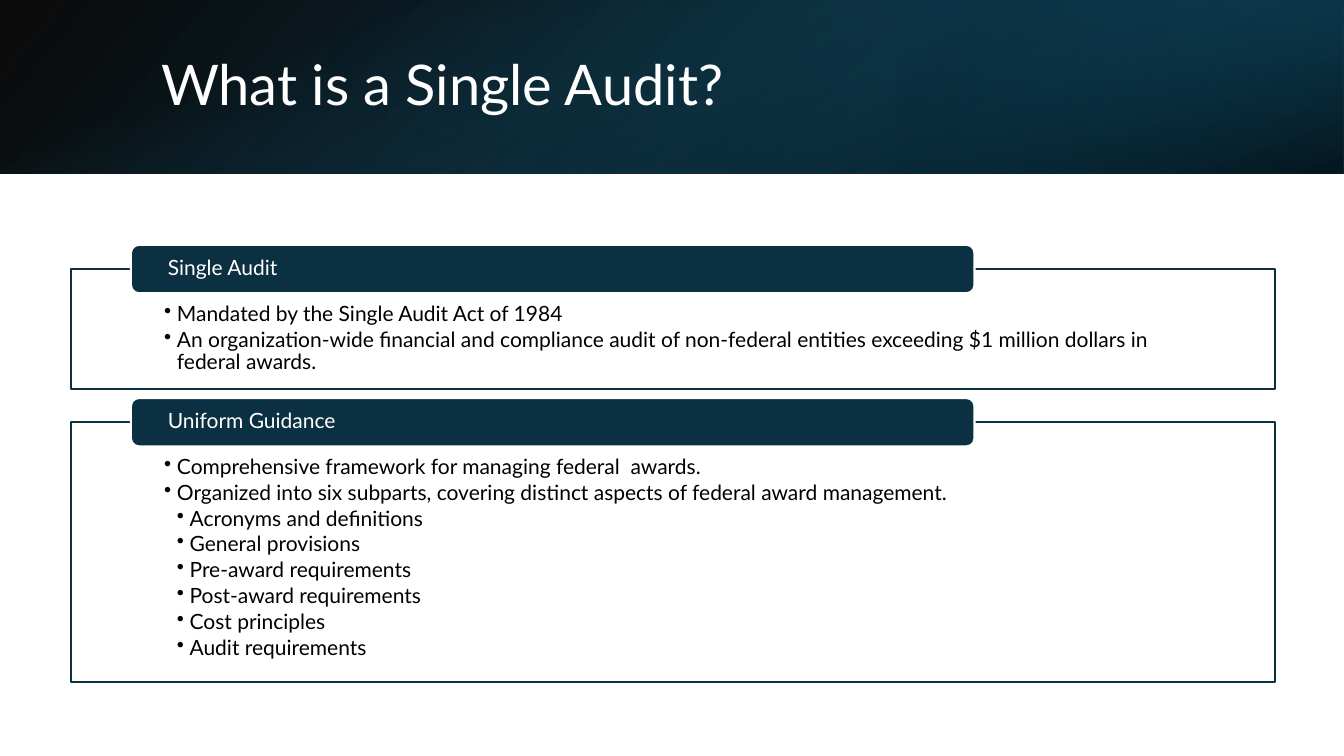
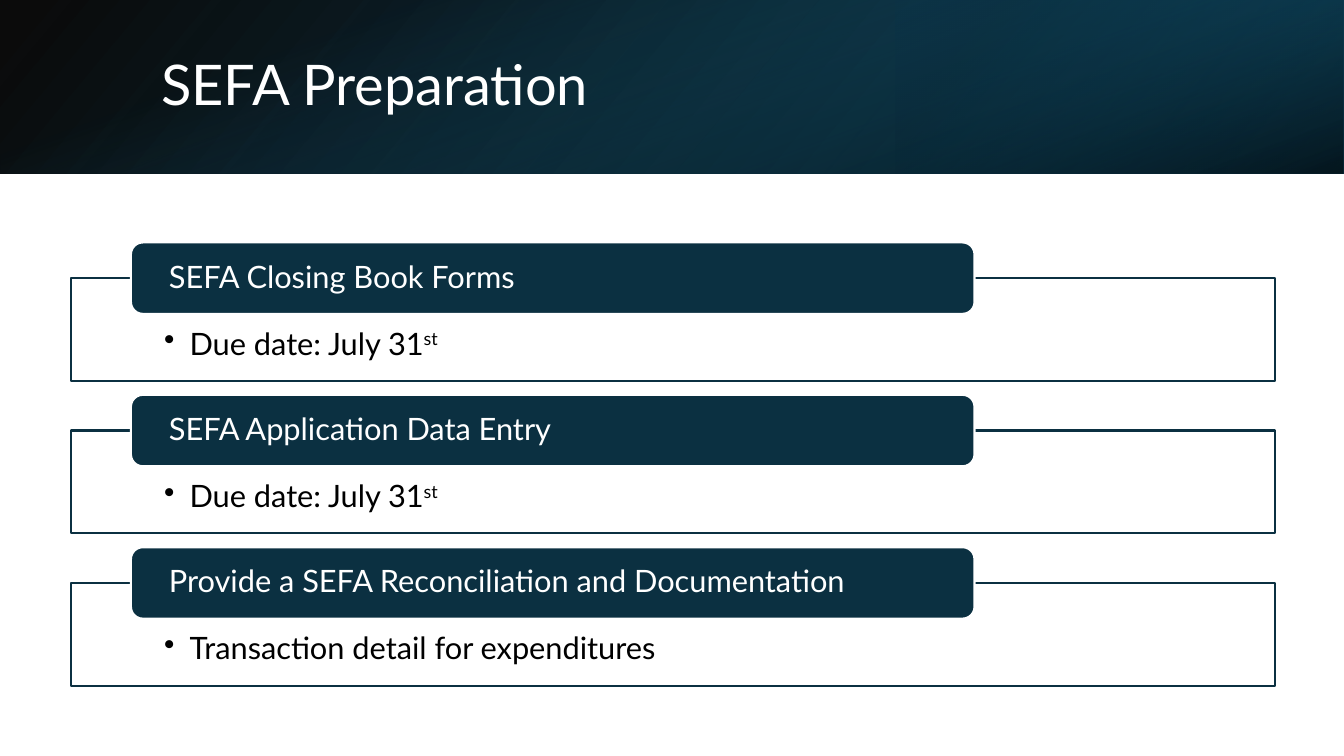
from lxml import etree
from pptx import Presentation
from pptx.dml.color import RGBColor
from pptx.enum.shapes import MSO_SHAPE
from pptx.enum.text import MSO_ANCHOR, MSO_AUTO_SIZE, PP_ALIGN
from pptx.oxml.ns import qn
from pptx.util import Cm, Pt

RECTANGLE, ROUNDED = MSO_SHAPE.RECTANGLE, MSO_SHAPE.ROUNDED_RECTANGLE
TOP, MIDDLE = MSO_ANCHOR.TOP, MSO_ANCHOR.MIDDLE
LEFT = PP_ALIGN.LEFT
NO_AUTOFIT = MSO_AUTO_SIZE.NONE
TITLE_ONLY = 5

NAVY = RGBColor(0x0B, 0x30, 0x41)
DEEP_TEAL = RGBColor(0x10, 0x48, 0x62)
TEAL = RGBColor(0x15, 0x60, 0x82)
BLACK = RGBColor(0, 0, 0)
WHITE = RGBColor(0xFF, 0xFF, 0xFF)
FONT = "Lato"

# Content: each section has a heading and bullets (level, text, superscript)
SLIDES = [
    {
        "title": "What is a Single Audit?",
        "size": 15, "top": 6.78, "gap": 0.84, "heading_height": 1.22,
        "hanging": 0.32, "inset_top": 0.86, "inset_bottom": 0.3,
        "sections": [
            ("Single Audit", 3.02, [
                (1, "Mandated by the Single Audit Act of 1984", ""),
                (1, "An organization-wide financial and compliance audit of "
                    "non-federal entities exceeding $1 million dollars in "
                    "federal awards.", ""),
            ]),
            ("Uniform Guidance", 6.55, [
                (1, "Comprehensive framework for managing federal  awards.", ""),
                (1, "Organized into six subparts, covering distinct aspects "
                    "of federal award management.", ""),
                (2, "Acronyms and definitions", ""),
                (2, "General provisions", ""),
                (2, "Pre-award requirements", ""),
                (2, "Post-award requirements", ""),
                (2, "Cost principles", ""),
                (2, "Audit requirements", ""),
            ]),
        ],
    },
    {
        "title": "SEFA Preparation",
        "size": 22, "top": 7.01, "gap": 1.25, "heading_height": 1.8,
        "hanging": 0.64, "inset_top": 1.27, "inset_bottom": 0.43,
        "sections": [
            ("SEFA Closing Book Forms", 2.59,
             [(1, "Due date: July 31", "st")]),
            ("SEFA Application Data Entry", 2.59,
             [(1, "Due date: July 31", "st")]),
            ("Provide a SEFA Reconciliation and Documentation", 2.59,
             [(1, "Transaction detail for expenditures", "")]),
        ],
    },
]

# Shared geometry, in centimetres
SLIDE_WIDTH, SLIDE_HEIGHT, BAND_HEIGHT = 33.87, 19.05, 4.37
FRAME_LEFT, FRAME_WIDTH, FRAME_INSET = 1.78, 30.35, 2.36
HEADING_LEFT, HEADING_WIDTH, HEADING_INSET = 3.3, 21.26, 0.87

# Band layers: box, rotation, mirrored, clockwise angle,
# stops (position %, colour, opacity %)
BAND_LAYERS = [
    ((0, 0, SLIDE_WIDTH, BAND_HEIGHT), 0, True, 140,
     [(0, BLACK, 96), (100, DEEP_TEAL, 100)]),
    ((SLIDE_WIDTH * 2 / 3, 0, SLIDE_WIDTH / 3, BAND_HEIGHT), 180, True, 320,
     [(19, NAVY, 68), (100, TEAL, 79)]),
    (((SLIDE_WIDTH - BAND_HEIGHT) / 2, (BAND_HEIGHT - SLIDE_WIDTH) / 2,
      BAND_HEIGHT, SLIDE_WIDTH), 90, False, 340,
     [(23, TEAL, 0), (99, BLACK, 74)]),
]


def add_box(slide, preset, box):
    shape = slide.shapes.add_shape(preset, *map(Cm, box))
    shape.shadow.inherit = False
    return shape


def style_box(shape, fill, line):
    shape.fill.solid()
    shape.fill.fore_color.rgb = fill
    shape.line.color.rgb = line
    shape.line.width = Pt(1.5)


def set_frame(text_frame, anchor, insets):
    text_frame.word_wrap = True
    text_frame.auto_size = NO_AUTOFIT
    text_frame.vertical_anchor = anchor
    (text_frame.margin_left, text_frame.margin_top,
     text_frame.margin_right, text_frame.margin_bottom) = map(Cm, insets)


def style_paragraph(paragraph, size, color):
    paragraph.alignment = LEFT
    paragraph.line_spacing = 0.9
    paragraph.font.name = FONT
    paragraph.font.size = Pt(size)
    paragraph.font.color.rgb = color


def add_band(slide):
    for box, rotation, mirrored, angle, stops in BAND_LAYERS:
        layer = add_box(slide, RECTANGLE, box)
        layer.line.fill.background()
        layer.rotation = rotation
        if mirrored:
            layer._element.spPr.xfrm.set("flipH", "1")
        layer.fill.gradient()
        layer.fill.gradient_angle = 360 - angle
        for stop, (position, color, _) in zip(layer.fill.gradient_stops, stops):
            stop.position = position / 100
            stop.color.rgb = color
        colors = layer._element.spPr.iter(qn("a:srgbClr"))
        for color_element, (_, _, opacity) in zip(list(colors), stops):
            alpha = etree.SubElement(color_element, qn("a:alpha"))
            alpha.set("val", str(opacity * 1000))


def add_title(slide, text):
    title = slide.shapes.title
    title.left, title.top, title.width, title.height = map(
        Cm, (3.81, 0.97, 27.89, 2.44))
    title.text = text
    set_frame(title.text_frame, MIDDLE, (0.25, 0.13, 0.25, 0.13))
    style_paragraph(title.text_frame.paragraphs[0], 40, WHITE)
    # Bring the title in front of the band
    slide.shapes._spTree.append(title._element)


def add_bullet(paragraph, bullet, size, hanging):
    level, text, superscript = bullet
    paragraph.level = level
    paragraph.space_after = Pt(size * 0.15)
    properties = paragraph._p.get_or_add_pPr()
    properties.set("marL", str(Cm(hanging * level)))
    properties.set("indent", str(-Cm(hanging)))
    etree.SubElement(properties, qn("a:buChar")).set("char", "•")
    style_paragraph(paragraph, size, BLACK)
    paragraph.add_run().text = text
    if superscript:
        run = paragraph.add_run()
        run.text = superscript
        run._r.get_or_add_rPr().set("baseline", "30000")


def add_section(slide, content, top, section):
    heading, height, bullets = section
    size = content["size"]

    # Outlined frame with the bullets
    frame = add_box(slide, RECTANGLE, (FRAME_LEFT, top, FRAME_WIDTH, height))
    style_box(frame, WHITE, NAVY)
    body = frame.text_frame
    set_frame(body, TOP, (FRAME_INSET, content["inset_top"],
                          FRAME_INSET, content["inset_bottom"]))
    for index, bullet in enumerate(bullets):
        paragraph = body.add_paragraph() if index else body.paragraphs[0]
        add_bullet(paragraph, bullet, size, content["hanging"])

    # Heading centred on the frame's top edge
    heading_height = content["heading_height"]
    label = add_box(slide, ROUNDED, (HEADING_LEFT, top - heading_height / 2,
                                     HEADING_WIDTH, heading_height))
    style_box(label, NAVY, WHITE)
    set_frame(label.text_frame, MIDDLE, (HEADING_INSET, 0, HEADING_INSET, 0))
    label.text_frame.text = heading
    style_paragraph(label.text_frame.paragraphs[0], size, WHITE)


def main():
    presentation = Presentation()
    presentation.slide_width = Cm(SLIDE_WIDTH)
    presentation.slide_height = Cm(SLIDE_HEIGHT)
    for content in SLIDES:
        slide = presentation.slides.add_slide(
            presentation.slide_layouts[TITLE_ONLY])
        add_band(slide)
        add_title(slide, content["title"])
        top = content["top"]
        for section in content["sections"]:
            add_section(slide, content, top, section)
            top += section[1] + content["gap"]
    presentation.save("out.pptx")


if __name__ == "__main__":
    main()
